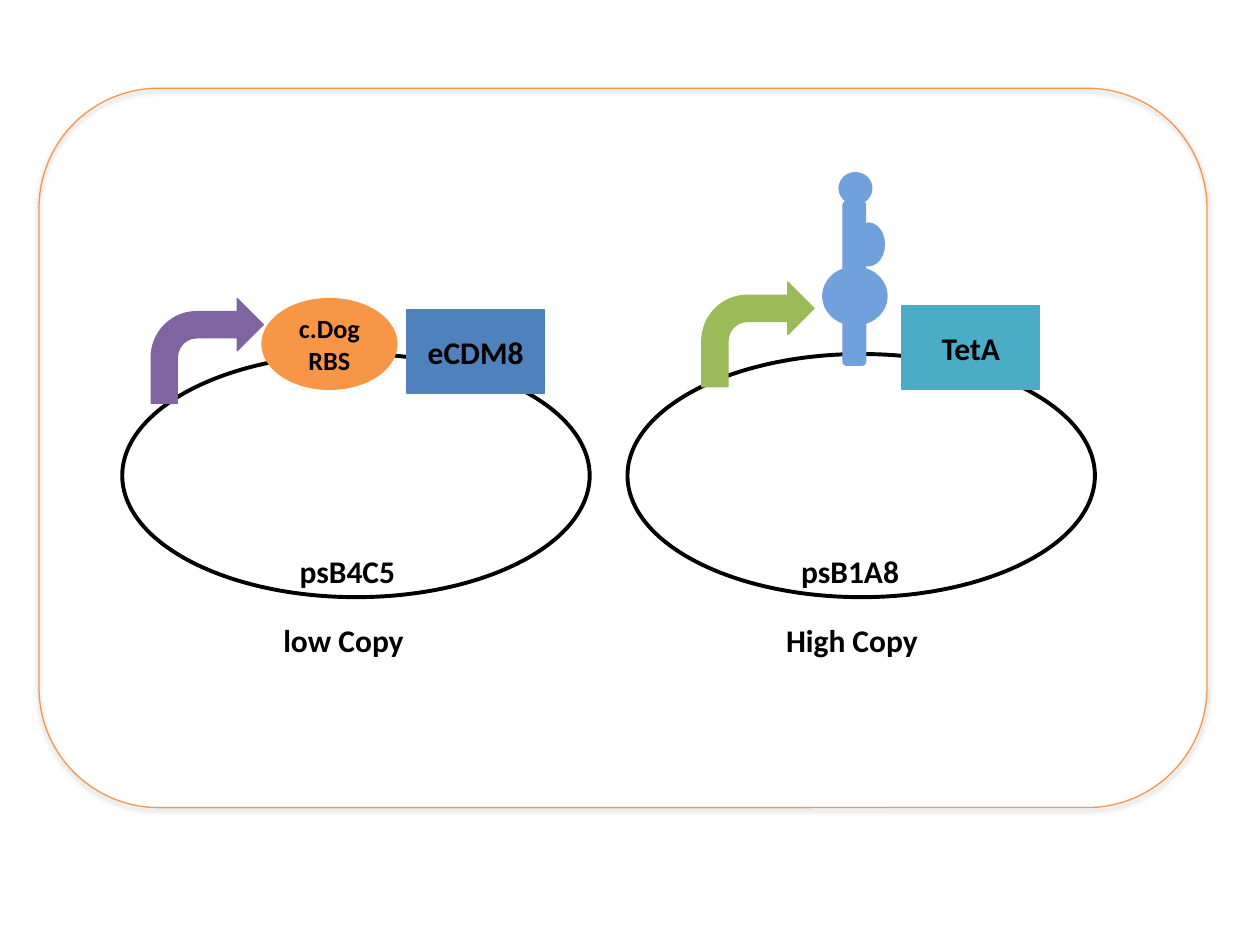
from collections import namedtuple

from lxml import etree
from pptx import Presentation
from pptx.dml.color import RGBColor
from pptx.enum.shapes import MSO_SHAPE
from pptx.enum.text import MSO_ANCHOR, MSO_AUTO_SIZE, PP_ALIGN
from pptx.oxml.ns import qn
from pptx.util import Inches, Pt

OVAL, RECT = MSO_SHAPE.OVAL, MSO_SHAPE.RECTANGLE
ROUNDED, BENT_ARROW = MSO_SHAPE.ROUNDED_RECTANGLE, MSO_SHAPE.BENT_ARROW
CENTER, MIDDLE = PP_ALIGN.CENTER, MSO_ANCHOR.MIDDLE
FIT_SHAPE = MSO_AUTO_SIZE.SHAPE_TO_FIT_TEXT

BLACK = RGBColor(0x00, 0x00, 0x00)
PURPLE = RGBColor(0x80, 0x64, 0xA2)
BLUE = RGBColor(0x4F, 0x81, 0xBD)
LIGHT_BLUE = RGBColor(0x71, 0xA1, 0xDC)
ORANGE = RGBColor(0xF7, 0x96, 0x46)
GREEN = RGBColor(0x9B, 0xBB, 0x59)
TEAL = RGBColor(0x4B, 0xAC, 0xC6)

FONT = "Calibri"

# The slide is a grid of 100 columns by 75 rows of square cells
CELL = Inches(0.1)
Box = namedtuple("Box", "left top width height")


def inside(box, left, top, width, height):
    """Place a box relative to the corner of another."""
    return Box(box.left + left, box.top + top, width, height)


def cells(box):
    return [round(n * CELL) for n in box]


def write(tf, text, size):
    p = tf.paragraphs[0]
    r = p.add_run()
    r.text = text
    r.font.name, r.font.size, r.font.bold = FONT, Pt(size), True
    r.font.color.rgb = BLACK
    return p


def add_part(slide, kind, box, line, fill=None, weight=0.75, text="", size=18):
    sp = slide.shapes.add_shape(kind, *cells(box))
    sp.shadow.inherit = False
    sp.line.color.rgb = line
    sp.line.width = Pt(weight)
    if fill is None:
        sp.fill.background()
    else:
        sp.fill.solid()
        sp.fill.fore_color.rgb = fill
    if text:
        sp.text_frame.vertical_anchor = MIDDLE
        write(sp.text_frame, text, size).alignment = CENTER
    return sp


def add_label(slide, box, text):
    tf = slide.shapes.add_textbox(*cells(box)).text_frame
    tf.word_wrap = False
    tf.auto_size = FIT_SHAPE
    write(tf, text, 18)


def add_plasmid(slide, box, promoter, gene, labels):
    """Ring with its promoter arrow, gene block and captions."""
    add_part(slide, OVAL, box, BLACK, weight=2.25)
    left, top, color = promoter
    add_part(slide, BENT_ARROW, inside(box, left, top, 8.9, 8.3), color, color)
    left, top, color, name = gene
    add_part(slide, RECT, inside(box, left, top, 10.9, 6.6), color, color, text=name)
    for top, (left, width, text) in zip((15.2, 20.7), labels):
        add_label(slide, inside(box, left, top, width, 4), text)


def add_binding_site(slide, box):
    add_part(slide, OVAL, box, ORANGE, ORANGE, text="c.Dog RBS", size=15)


def add_hairpin(slide, box):
    """Stem with its large loop, side bulge and tip."""
    parts = [
        (ROUNDED, 1.6, 2.3, 1.8, 13),
        (OVAL, 0, 7.5, box.width, 4.6),
        (OVAL, 2.3, 4, 2.6, 3.4),
        (OVAL, 1.3, 0, 2.6, 2.5),
    ]
    for kind, *place in parts:
        add_part(slide, kind, inside(box, *place), LIGHT_BLUE, LIGHT_BLUE)


def add_frame(slide, box):
    """Rounded outline with a soft shadow below."""
    sp = add_part(slide, ROUNDED, box, ORANGE)
    effects = sp._element.spPr.find(qn("a:effectLst"))
    shadow = etree.SubElement(effects, qn("a:outerShdw"), blurRad=str(Pt(3.1)),
                              dist=str(Pt(1.8)), dir="5400000", rotWithShape="0")
    color = etree.SubElement(shadow, qn("a:srgbClr"), val=str(BLACK))
    etree.SubElement(color, qn("a:alpha"), val="35000")


def main():
    prs = Presentation()
    prs.slide_width, prs.slide_height = 100 * CELL, 75 * CELL
    slide = prs.slides.add_slide(prs.slide_layouts[6])

    # Low copy plasmid
    low = Box(9.7, 28.1, 37.1, 19.3)
    add_plasmid(slide, low, (2.3, -4.4, PURPLE), (22.6, -3.5, BLUE, "eCDM8"),
                [(13.1, 9.7, "psB4C5"), (11.8, 11.7, "low Copy")])
    add_binding_site(slide, inside(low, 11.1, -4.4, 10.7, 7.2))

    # High copy plasmid
    high = low._replace(left=49.8)
    add_plasmid(slide, high, (5.9, -5.7, GREEN), (21.8, -3.8, TEAL, "TetA"),
                [(12.8, 9.9, "psB1A8"), (11.6, 12.7, "High Copy")])
    add_hairpin(slide, inside(high, 15.5, -14.4, 5.1, 15.3))

    # Frame around both
    add_frame(slide, Box(3.1, 7, 92.7, 57.1))
    prs.save("out.pptx")


if __name__ == "__main__":
    main()
